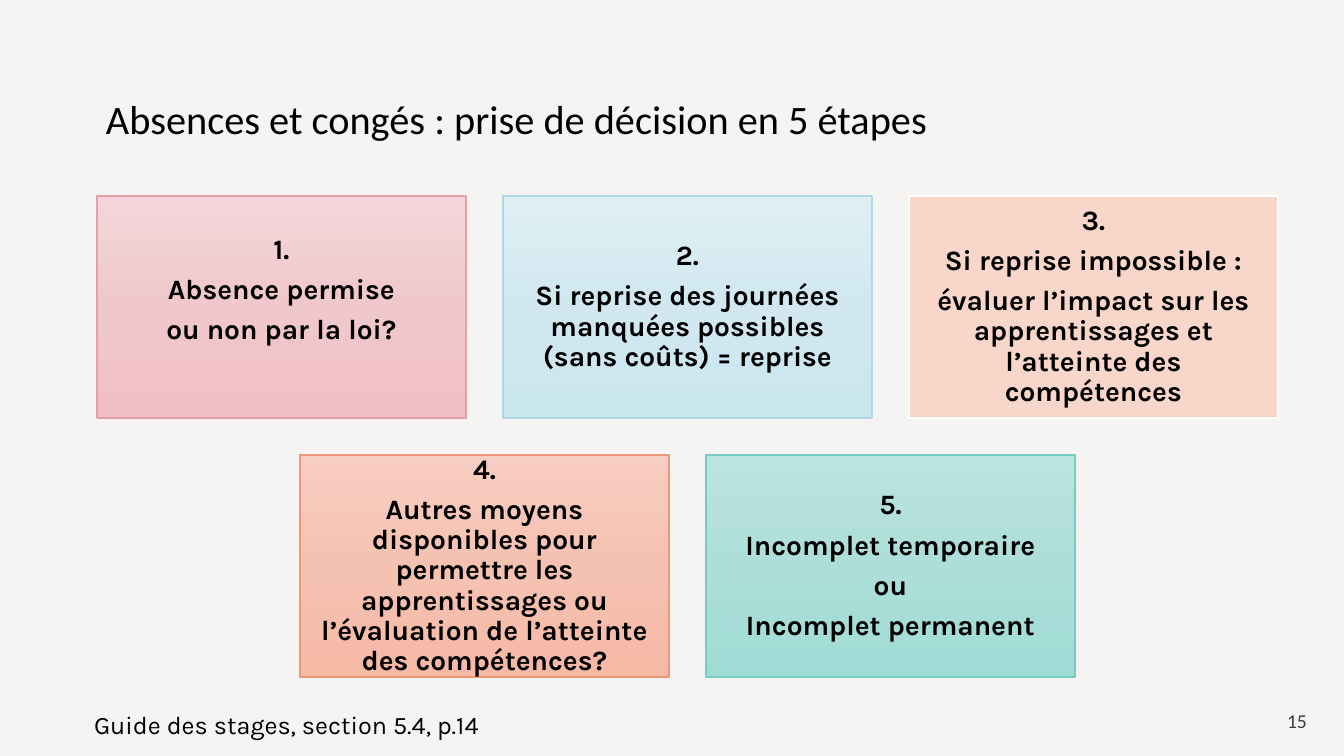
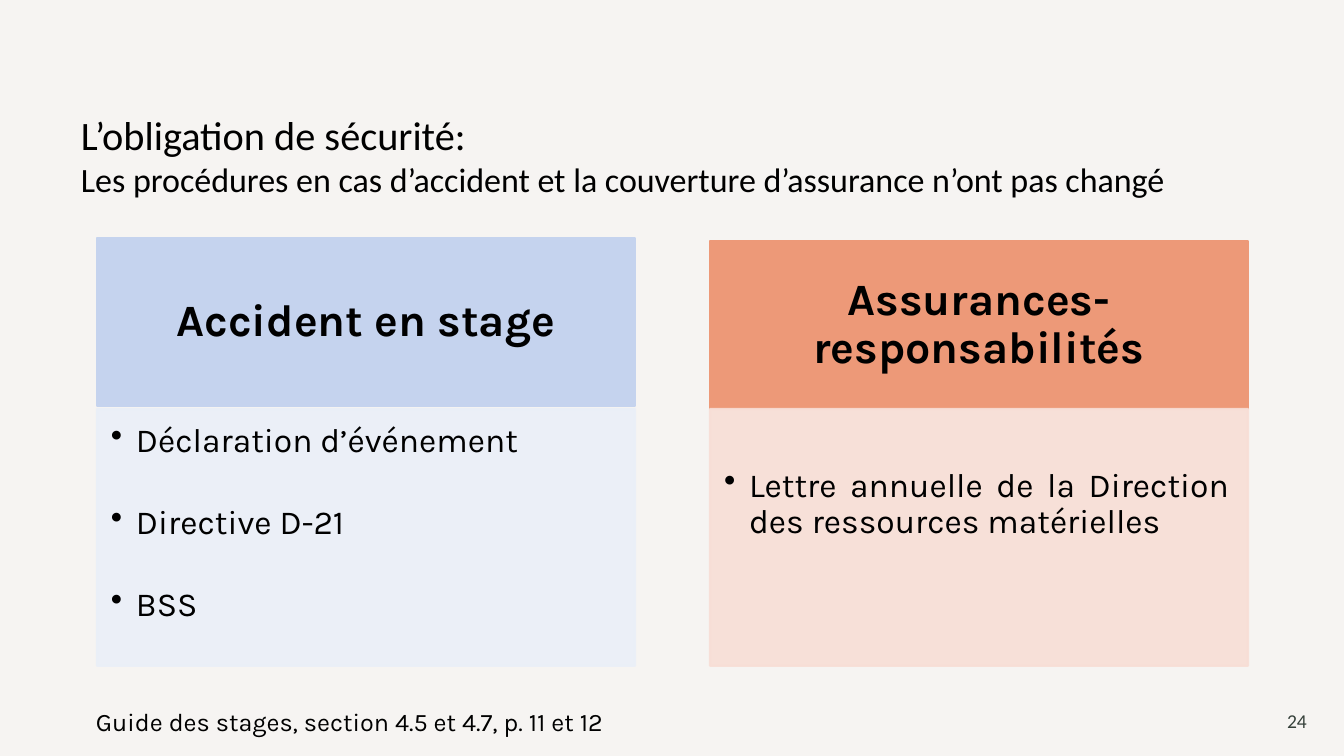
from copy import deepcopy
from itertools import cycle

from pptx import Presentation
from pptx.dml.color import RGBColor
from pptx.enum.shapes import MSO_SHAPE
from pptx.enum.text import MSO_ANCHOR, MSO_AUTO_SIZE, PP_ALIGN
from pptx.oxml.ns import qn
from pptx.oxml.xmlchemy import OxmlElement
from pptx.util import Emu, Pt

# Content
STEPS_SLIDE = {
    "title": ["Absences et congés : prise de décision en 5 étapes"],
    "title_box": (96, 65, 1152, 83),
    "source": "Guide des stages, section 5.4, p.14",
    "source_at": (84, 704),
    "number": "15",
}
STEPS = [
    ("rose", ["1.", "Absence permise", "ou non par la loi?"]),
    ("sky", ["2.", "Si reprise des journées manquées possibles\n(sans coûts) = reprise"]),
    ("peach", ["3.", "Si reprise impossible :",
               "évaluer l’impact sur les apprentissages et l’atteinte des compétences"]),
    ("orange", ["4.", "Autres moyens disponibles pour permettre les apprentissages "
                      "ou l’évaluation de l’atteinte des compétences?"]),
    ("teal", ["5.", "Incomplet temporaire", "ou", "Incomplet permanent"]),
]
STEP_ROWS = [STEPS[:3], STEPS[3:]]

SAFETY_SLIDE = {
    "title": ["L’obligation de sécurité:",
              "Les procédures en cas d’accident et la couverture d’assurance n’ont pas changé"],
    "title_box": (71, 65, 1227, 139),
    "source": "Guide des stages, section 4.5 et 4.7, p. 11 et 12",
    "source_at": (86, 701),
    "number": "24",
}
TOPICS = [
    {"heading": "Accident en stage", "top": 238, "color": "blue", "tint": "pale_blue",
     "points": ["Déclaration d’événement", "Directive D-21", "BSS"], "points_inset": 14},
    {"heading": "Assurances-responsabilités", "top": 241, "color": "coral", "tint": "pale_coral",
     "points": ["Lettre annuelle de la Direction des ressources matérielles"],
     "points_inset": 59},
]

# Shared style
COLORS = {
    "background": "F6F4F2", "text": "000000", "number": "35403A", "white": "FFFFFF",
    "peach": "F8D6C9", "blue": "C5D3EE", "pale_blue": "EAEFF8",
    "coral": "ED9978", "pale_coral": "F8DED6",
}
GRADIENTS = {  # three stops, then the outline
    "rose": ("F4D5D9", "F0C8CC", "F0BFC4", "E59FA7"),
    "sky": ("DEEFF4", "D1E8F0", "CAE6EF", "AED7E4"),
    "orange": ("F7CEC1", "F5C2B2", "F6B9A5", "ED9978"),
    "teal": ("BBE4E0", "AEDED9", "A0DCD6", "74CBC3"),
}
HEAD_FONT, BODY_FONT = "Calibri", "Karla"
TITLE_SIZES = (28.8, 24.3)
SLIDE_W, SLIDE_H = 1344, 756
MARGIN = 97
STEP_W, STEP_H, STEP_GAP, STEP_TOP = 369, 222, 37, 196
TOPIC_W, TOPIC_PITCH, HEADING_H = 538, 613, 168
POINTS_TOP, POINTS_H = 409, 257


def px(length):
    return Emu(round(length * 914400 / 100.8))


def rgb(name):
    return RGBColor.from_string(COLORS.get(name, name))


def write(frame, paragraphs, *, sizes=(18,), font=BODY_FONT, color="text", bold=False,
          align=PP_ALIGN.LEFT, anchor=MSO_ANCHOR.TOP, inset=(10, 5, 10, 5),
          spacing=1.0, after=0, bullet=False):
    frame.word_wrap = True
    frame.auto_size = MSO_AUTO_SIZE.NONE
    frame.vertical_anchor = anchor
    (frame.margin_left, frame.margin_top,
     frame.margin_right, frame.margin_bottom) = map(px, inset)
    for index, (text, size) in enumerate(zip(paragraphs, cycle(sizes))):
        paragraph = frame.add_paragraph() if index else frame.paragraphs[0]
        paragraph.text = text
        paragraph.alignment = align
        paragraph.line_spacing = spacing
        paragraph.space_after = Pt(after)
        for run in paragraph.runs:
            run.font.size = Pt(size)
            run.font.name = font
            run.font.bold = bold
            run.font.color.rgb = rgb(color)
        if bullet:
            add_bullet(paragraph)


def add_bullet(paragraph):
    properties = paragraph._p.get_or_add_pPr()
    properties.set("marL", str(px(25)))
    properties.set("indent", str(-px(25)))
    mark = OxmlElement("a:buChar")
    mark.set("char", "•")
    properties.append(mark)


def add_panel(slide, box, fill, outline, width):
    panel = slide.shapes.add_shape(MSO_SHAPE.RECTANGLE, *map(px, box))
    panel.shadow.inherit = False
    if fill in GRADIENTS:
        fill_gradient(panel, GRADIENTS[fill][:3])
    else:
        panel.fill.solid()
        panel.fill.fore_color.rgb = rgb(fill)
    panel.line.color.rgb = rgb(outline)
    panel.line.width = Pt(width)
    return panel


def fill_gradient(panel, colors):
    panel.fill.gradient()
    panel.fill.gradient_angle = 270
    stop_list = panel.element.spPr.find(".//" + qn("a:gsLst"))
    stop_list.insert(1, deepcopy(stop_list[0]))
    for stop, position, color in zip(panel.fill.gradient_stops, (0, 0.5, 1), colors):
        stop.position = position
        stop.color.rgb = rgb(color)


def set_opacity(panel, percent):
    for color in panel.element.spPr.iter(qn("a:srgbClr")):
        alpha = OxmlElement("a:alpha")
        alpha.set("val", str(percent * 1000))
        color.append(alpha)


def add_text(slide, box, text, **style):
    write(slide.shapes.add_textbox(*map(px, box)).text_frame, [text], **style)


def start_slide(deck, content):
    """Add a slide with its title, source line and page number."""
    slide = deck.slides.add_slide(deck.slide_layouts[5])
    title = slide.shapes.title
    title.left, title.top, title.width, title.height = map(px, content["title_box"])
    write(title.text_frame, content["title"], sizes=TITLE_SIZES, font=HEAD_FONT,
          anchor=MSO_ANCHOR.BOTTOM)
    add_text(slide, (*content["source_at"], 672, 40), content["source"])
    add_text(slide, (1260, 701, 57, 40), content["number"], sizes=(14,), font=HEAD_FONT,
             color="number", align=PP_ALIGN.RIGHT, anchor=MSO_ANCHOR.MIDDLE)
    return slide


def build_steps(deck):
    slide = start_slide(deck, STEPS_SLIDE)
    pitch = STEP_W + STEP_GAP
    for row, steps in enumerate(STEP_ROWS):
        # Shorter rows are centred under the first one
        left = MARGIN + (len(STEP_ROWS[0]) - len(steps)) * pitch / 2
        top = STEP_TOP + row * (STEP_H + STEP_GAP)
        for column, (color, lines) in enumerate(steps):
            outline, width = (GRADIENTS[color][3], 1) if color in GRADIENTS else ("white", 1.5)
            panel = add_panel(slide, (left + column * pitch, top, STEP_W, STEP_H),
                              color, outline, width)
            bottom = 42 if color == "rose" else 8  # the first step sits higher
            write(panel.text_frame, lines, sizes=(20,), bold=True, align=PP_ALIGN.CENTER,
                  anchor=MSO_ANCHOR.MIDDLE, inset=(8, 8, 8, bottom), spacing=0.9, after=7)


def build_safety(deck):
    slide = start_slide(deck, SAFETY_SLIDE)
    for column, topic in enumerate(TOPICS):
        left = MARGIN + column * TOPIC_PITCH
        heading = add_panel(slide, (left, topic["top"], TOPIC_W, HEADING_H),
                            topic["color"], topic["color"], 1.5)
        write(heading.text_frame, [topic["heading"]], sizes=(32,), bold=True,
              align=PP_ALIGN.CENTER, anchor=MSO_ANCHOR.MIDDLE, inset=(25, 14, 25, 14),
              spacing=0.9)
        points = add_panel(slide, (left, POINTS_TOP, TOPIC_W, POINTS_H),
                           topic["tint"], topic["tint"], 1.5)
        set_opacity(points, 90)
        write(points.text_frame, topic["points"], sizes=(24,), align=PP_ALIGN.JUSTIFY,
              inset=(14, topic["points_inset"], 19, 21), spacing=0.9, after=33, bullet=True)


def main():
    deck = Presentation()
    deck.slide_width, deck.slide_height = px(SLIDE_W), px(SLIDE_H)
    background = deck.slide_master.background.fill
    background.solid()
    background.fore_color.rgb = rgb("background")
    build_steps(deck)
    build_safety(deck)
    deck.save("out.pptx")


if __name__ == "__main__":
    main()
